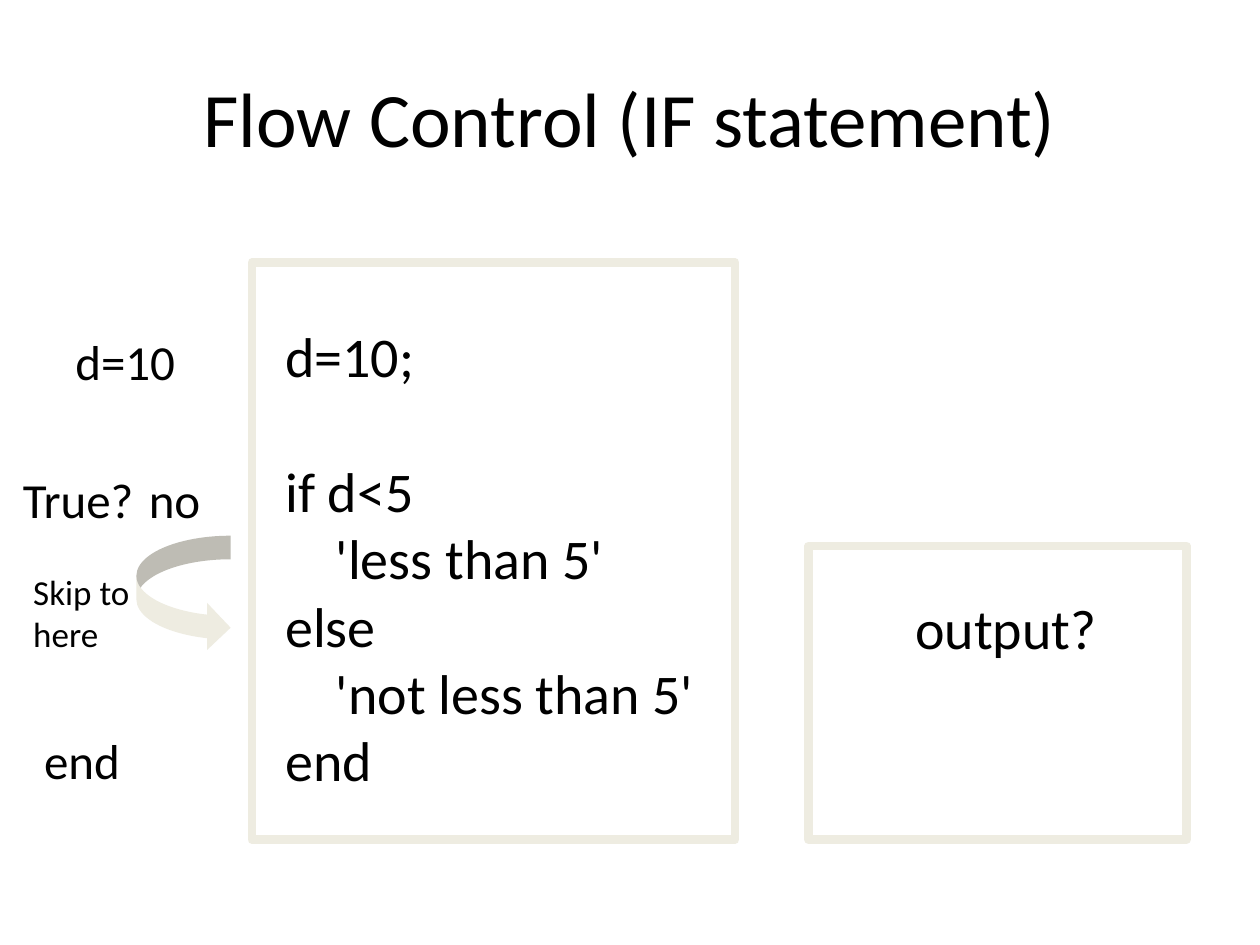
from pptx import Presentation
from pptx.dml.color import RGBColor
from pptx.enum.shapes import MSO_SHAPE as Shape
from pptx.enum.text import MSO_ANCHOR as Anchor, PP_ALIGN as Align
from pptx.util import Cm, Pt

BLACK = RGBColor(0x00, 0x00, 0x00)
CREAM = RGBColor(0xEE, 0xEC, 0xE1)
FONT = "Calibri"


def format_paragraph(paragraph, size):
    for run in paragraph.runs:
        run.font.name = FONT
        run.font.size = Pt(size)
        run.font.color.rgb = BLACK


def add_text(slide, lines, left, top, width, height, size):
    box = slide.shapes.add_textbox(Cm(left), Cm(top), Cm(width), Cm(height))
    text_frame = box.text_frame
    text_frame.word_wrap = True
    text_frame.text = "\n".join(lines)
    for paragraph in text_frame.paragraphs:
        format_paragraph(paragraph, size)
    return text_frame


presentation = Presentation()
presentation.slide_width = Cm(25.4)
presentation.slide_height = Cm(19.05)
slide = presentation.slides.add_slide(presentation.slide_layouts[5])

title = slide.shapes.title
title.left, title.top, title.width, title.height = Cm(1.27), Cm(0.76), Cm(22.86), Cm(3.18)
title.text_frame.text = "Flow Control (IF statement)"
title.text_frame.vertical_anchor = Anchor.MIDDLE
title_paragraph = title.text_frame.paragraphs[0]
title_paragraph.alignment = Align.CENTER
format_paragraph(title_paragraph, 44)

code_lines = [
    "d=10;",
    "if d<5",
    "    'less than 5'",
    "else",
    "    'not less than 5'",
    "end",
]
code = add_text(slide, code_lines, 5.5, 6.35, 9.32, 9.83, 32)
code.paragraphs[1].space_before = Pt(39)

add_text(slide, ["output?"], 18.2, 11.85, 6, 1.62, 32)

frames = [(5.08, 5.29, 9.74, 11.64), (16.3, 11.01, 7.62, 5.92)]
for left, top, width, height in frames:
    frame = slide.shapes.add_shape(Shape.RECTANGLE, Cm(left), Cm(top), Cm(width), Cm(height))
    frame.shadow.inherit = False
    frame.fill.background()
    frame.line.color.rgb = CREAM
    frame.line.width = Pt(5)

arrow = slide.shapes.add_shape(Shape.CURVED_RIGHT_ARROW, Cm(2.75), Cm(10.8), Cm(1.9), Cm(2.33))
arrow.shadow.inherit = False
arrow.fill.solid()
arrow.fill.fore_color.rgb = CREAM
arrow.line.fill.background()

step_labels = [
    ("d=10", 1.27, 6.56, 28),
    ("True?", 0.21, 9.35, 28),
    ("no", 2.75, 9.35, 28),
    ("Skip to here", 0.42, 11.38, 20),
    ("end", 0.64, 14.61, 28),
]
for label, left, top, size in step_labels:
    add_text(slide, [label], left, top, 3.6, 1.45, size)

presentation.save("out.pptx")
